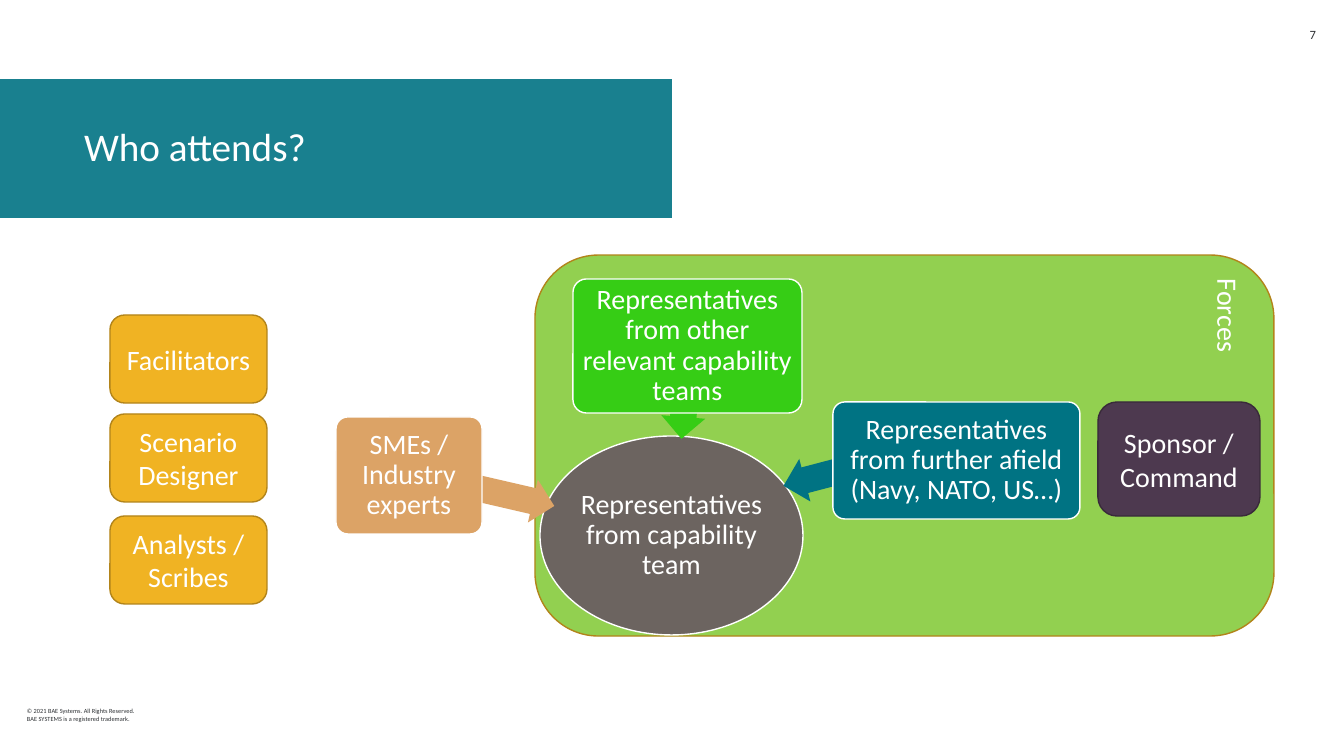
from lxml import etree
from pptx import Presentation
from pptx.dml.color import RGBColor
from pptx.enum.shapes import MSO_SHAPE as Preset
from pptx.enum.text import MSO_ANCHOR as Anchor, MSO_AUTO_SIZE as AutoSize, PP_ALIGN as Align
from pptx.oxml.ns import qn
from pptx.util import Pt

PX = 914400 / 100.8  # EMU in one px
WHITE, TEAL, INK = "FFFFFF", "007383", "2D3033"


def add_block(preset, bounds, fill, line=None, turn=0):
    block = page.shapes.add_shape(preset, *[round(n * PX) for n in bounds])
    block.shadow.inherit = False
    block.rotation = turn
    block.fill.solid()
    block.fill.fore_color.rgb = RGBColor.from_string(fill)
    if line:
        block.line.color.rgb = RGBColor.from_string(line)
        block.line.width = Pt(1)
    else:
        block.line.fill.background()
    return block


def write(box, lines, size=20, color=WHITE, align=Align.CENTER, anchor=Anchor.MIDDLE,
          insets=(10, 5, 10, 5), spacing=1.0):
    frame = box.text_frame
    frame.word_wrap = True
    frame.auto_size = AutoSize.NONE
    frame.vertical_anchor = anchor
    frame.margin_left, frame.margin_top, frame.margin_right, frame.margin_bottom = [
        round(n * PX) for n in insets]
    for index, line in enumerate(lines):
        para = frame.add_paragraph() if index else frame.paragraphs[0]
        para.alignment = align
        para.line_spacing = spacing
        span = para.add_run()
        span.text = line
        span.font.size = Pt(size)
        span.font.name = "Calibri"
        span.font.color.rgb = RGBColor.from_string(color)


deck = Presentation()
deck.slide_width, deck.slide_height = round(1344 * PX), round(756 * PX)
page = deck.slides.add_slide(deck.slide_layouts[5])

# Title band, slightly transparent
title = page.shapes.title
title.left, title.top, title.width, title.height = [round(n * PX) for n in (0, 79, 672, 139)]
title.fill.solid()
title.fill.fore_color.rgb = RGBColor.from_string(TEAL)
band_color = title.fill._xPr.find(".//" + qn("a:srgbClr"))
etree.SubElement(band_color, qn("a:alpha")).set("val", "90000")
write(title, ["Who attends?"], 28, align=Align.LEFT, insets=(84, 0, 0, 0), spacing=0.9)

# Copyright and page number
small_print = [
    ((27, 699, 180, 32), 4.5, Align.LEFT,
     ["© 2021 BAE Systems. All Rights Reserved.", "BAE SYSTEMS is a registered trademark."]),
    ((1276, 27, 40, 14), 9, Align.RIGHT, ["7"]),
]
for bounds, size, align, lines in small_print:
    box = page.shapes.add_textbox(*[round(n * PX) for n in bounds])
    write(box, lines, size, INK, align, insets=(0, 0, 0, 0))

# Forces area with its sideways label
forces = add_block(Preset.ROUNDED_RECTANGLE, (535, 255, 739, 381), "92D050", "B2841A")
write(forces, ["Forces"], align=Align.LEFT, anchor=Anchor.TOP)
forces.text_frame._txBody.bodyPr.set("vert", "vert")

# Capability team in the centre
team = add_block(Preset.OVAL, (540, 436, 263, 199), "6C6460", WHITE)
write(team, ["Representatives from capability team"], insets=(1, 1, 1, 1), spacing=0.9)

# Contributors, each with an arrow to the team
contributors = [
    ("SMEs / Industry experts", "DCA366", (336, 417, 146, 117), (423, 469, 133, 44), 193),
    ("Representatives from other relevant capability teams", "36CD15",
     (573, 279, 229, 134), (642, 374, 86, 44), 274.7),
    ("Representatives from further afield (Navy, NATO, US…)", TEAL,
     (833, 402, 247, 117), (781, 444, 156, 44), 345.3),
]
for label, color, bounds, arrow_bounds, turn in contributors:
    arrow = add_block(Preset.LEFT_ARROW, arrow_bounds, color, turn=turn)
    arrow.adjustments[0] = 0.6
    card = add_block(Preset.ROUNDED_RECTANGLE, bounds, color, WHITE)
    card.adjustments[0] = 0.1
    write(card, [label], insets=(4, 4, 4, 4), spacing=0.9)

# Workshop staff and sponsor
for label, top in [("Facilitators", 315), ("Scenario Designer", 414), ("Analysts / Scribes", 516)]:
    write(add_block(Preset.ROUNDED_RECTANGLE, (110, top, 157, 88), "F0B323", "B2841A"), [label])
sponsor = add_block(Preset.ROUNDED_RECTANGLE, (1098, 402, 162, 114), "4D394F", "392A3A")
write(sponsor, ["Sponsor / Command"])

deck.save("out.pptx")
